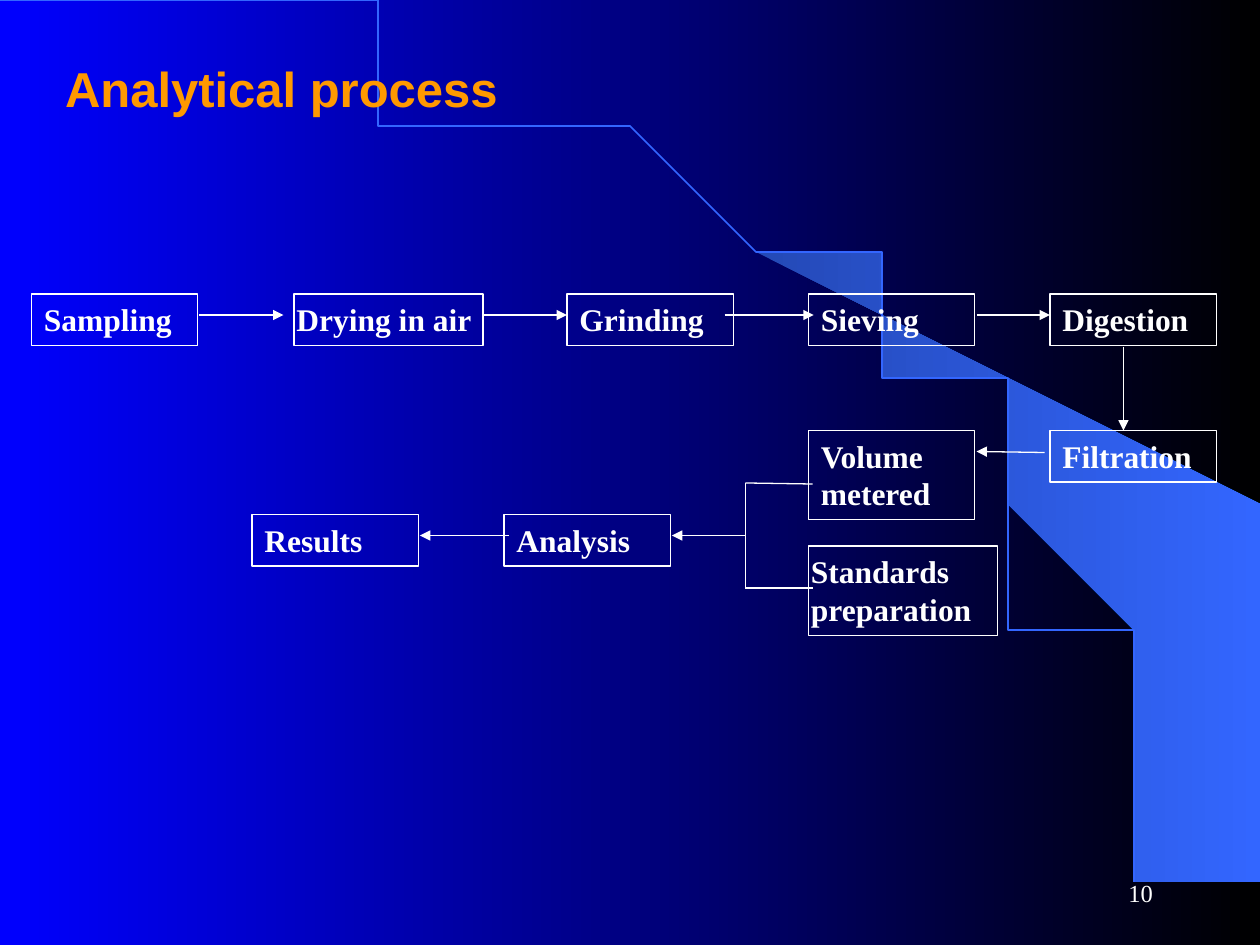
from typing import NamedTuple

from lxml import etree
from pptx import Presentation
from pptx.dml.color import RGBColor
from pptx.enum.shapes import MSO_CONNECTOR, MSO_SHAPE
from pptx.enum.text import MSO_ANCHOR, MSO_AUTO_SIZE, PP_ALIGN
from pptx.oxml.ns import qn
from pptx.util import Inches, Pt

LEFT, RIGHT = PP_ALIGN.LEFT, PP_ALIGN.RIGHT
TOP, MIDDLE = MSO_ANCHOR.TOP, MSO_ANCHOR.MIDDLE
FIXED = MSO_AUTO_SIZE.NONE
STRAIGHT = MSO_CONNECTOR.STRAIGHT
RECT = MSO_SHAPE.RECTANGLE

WIDTH, HEIGHT = Inches(10), Inches(7.5)
UNIT = WIDTH / 120  # the grid has 120 columns and 90 rows
WHITE, BLUE, BLACK, NAVY = "FFFFFF", "0000FF", "000000", "000080"
ORANGE, SKY, DUSK = "FF9900", "3366FF", "2449B6"
SERIF, SANS = "Times New Roman", "Arial"
THIN = 0.75
NARROW, WIDE = 15.84, 18
LOW, TALL = 4.9, 8.5


class Box(NamedTuple):
    text: str
    col: float
    row: float
    width: float = NARROW
    height: float = LOW
    pad: float = 0.1


class Link(NamedTuple):
    start: tuple[float, float]
    end: tuple[float, float]
    arrow: bool = True


BOXES = [
    Box("Sampling", 3, 28),
    Box("Drying in air", 28, 28, WIDE, pad=0.02),
    Box("Grinding", 54, 28),
    Box("Sieving", 77, 28),
    Box("Digestion", 100, 28),
    Box("Filtration", 100, 41),
    Box("Volume metered", 77, 41, height=TALL),
    Box("Standards preparation", 77, 52, WIDE, TALL, 0.02),
    Box("Analysis", 48, 49),
    Box("Results", 24, 49),
]
LINKS = [
    Link((19, 30), (27, 30)),
    Link((46, 30), (54, 30)),
    Link((69, 30), (77.5, 30)),
    Link((93, 30), (100, 30)),
    Link((107, 33), (107, 41)),
    Link((99.5, 43.1), (93, 43)),
    Link((71, 51), (64, 51)),
    Link((48.5, 51), (40, 51)),
    Link((71, 46), (71, 56), False),
    Link((71, 46), (77.4, 46.1), False),
    Link((71, 56), (77.4, 56), False),
]
# Outlines in inches
WEDGE = [
    (9.2, 7.48), (9.99, 7.49), (9.99, 4.23), (5.89, 1.73), (6.24, 1.99),
    (6.53, 2.22), (6.85, 2.5), (7.16, 2.8), (7.62, 3.3), (8.03, 3.84),
    (8.32, 4.31), (8.58, 4.79), (8.78, 5.28), (8.93, 5.72), (9.03, 6.09),
    (9.13, 6.56), (9.17, 6.96),
]
CURVE = [(0, 0), (5.08, 0), (9.2, 3.35), (9.2, 7.49)]
SPECK = [(6.19, 6.54), (6.22, 6.56), (6.19, 6.58), (6.16, 6.56)]


def tint(code: str) -> RGBColor:
    return RGBColor.from_string(code)


def grid(*sizes: float) -> list[int]:
    return [round(size * UNIT) for size in sizes]


def blend(fill, *codes: str) -> None:
    """Fill with a gradient from left to right."""
    fill.gradient()
    fill.gradient_angle = 0
    for stop, code in zip(fill.gradient_stops, codes):
        stop.color.rgb = tint(code)


def stroke(line, code: str, width: float = THIN) -> None:
    line.color.rgb = tint(code)
    line.width = Pt(width)


def write(frame, text: str, *, font=SERIF, size=18, color=WHITE, bold=True,
          align=LEFT, anchor=TOP, pad=0.1) -> None:
    frame.word_wrap = True
    frame.auto_size = FIXED
    frame.vertical_anchor = anchor
    frame.margin_left = frame.margin_right = Inches(pad)
    frame.margin_top = frame.margin_bottom = Inches(0.05)
    para = frame.paragraphs[0]
    para.alignment = align
    run = para.add_run()
    run.text = text
    run.font.name, run.font.size, run.font.bold = font, Pt(size), bold
    run.font.color.rgb = tint(color)


def outline(shapes, points: list[tuple[float, float]], close: bool = True):
    pen = shapes.build_freeform(*points[0], scale=Inches(1))
    pen.add_line_segments(points[1:], close=close)
    shape = pen.convert_to_shape()
    shape.shadow.inherit = False
    return shape


def bezier(knots: list[tuple[float, float]], steps: int = 60) -> list[tuple[float, float]]:
    points = []
    for step in range(steps + 1):
        t = step / steps
        parts = (1 - t) ** 3, 3 * t * (1 - t) ** 2, 3 * t * t * (1 - t), t ** 3
        points.append(tuple(sum(p * v for p, v in zip(parts, axis))
                            for axis in zip(*knots)))
    return points


def draw_box(shapes, box: Box) -> None:
    shape = shapes.add_shape(RECT, *grid(box.col, box.row, box.width, box.height))
    shape.shadow.inherit = False
    shape.fill.background()
    stroke(shape.line, WHITE)
    write(shape.text_frame, box.text, pad=box.pad)


def draw_link(shapes, link: Link) -> None:
    line = shapes.add_connector(STRAIGHT, *grid(*link.start, *link.end))
    stroke(line.line, WHITE)
    props = line._element.spPr
    if link.arrow:
        etree.SubElement(props.find(qn("a:ln")), qn("a:tailEnd"), type="triangle")
    etree.SubElement(props, qn("a:effectLst"))


def draw_scene(slide) -> None:
    """Paint the backdrop, with its wedge and arc."""
    blend(slide.background.fill, BLUE, BLACK)
    wedge = outline(slide.shapes, WEDGE)
    blend(wedge.fill, DUSK, SKY)
    wedge.line.fill.background()
    arc = outline(slide.shapes, bezier(CURVE), close=False)
    arc.fill.background()
    stroke(arc.line, SKY, 1)


def main() -> None:
    deck = Presentation()
    deck.slide_width, deck.slide_height = WIDTH, HEIGHT
    slide = deck.slides.add_slide(deck.slide_layouts[5])
    shapes = slide.shapes
    draw_scene(slide)

    title = shapes.title
    title.left, title.top, title.width, title.height = grid(5, 5, 103, 6.8)
    write(title.text_frame, "Analytical process", font=SANS, size=28, color=ORANGE)
    shapes._spTree.append(title._element)  # in front of the arc

    number = shapes.add_textbox(*grid(86, 82, 25, 6))
    write(number.text_frame, "10", size=14, bold=False, align=RIGHT, anchor=MIDDLE)

    for box in BOXES:
        draw_box(shapes, box)
    for link in LINKS:
        draw_link(shapes, link)

    speck = outline(shapes, SPECK)
    speck.fill.solid()
    speck.fill.fore_color.rgb = tint(NAVY)
    stroke(speck.line, NAVY)
    deck.save("out.pptx")


if __name__ == "__main__":
    main()
